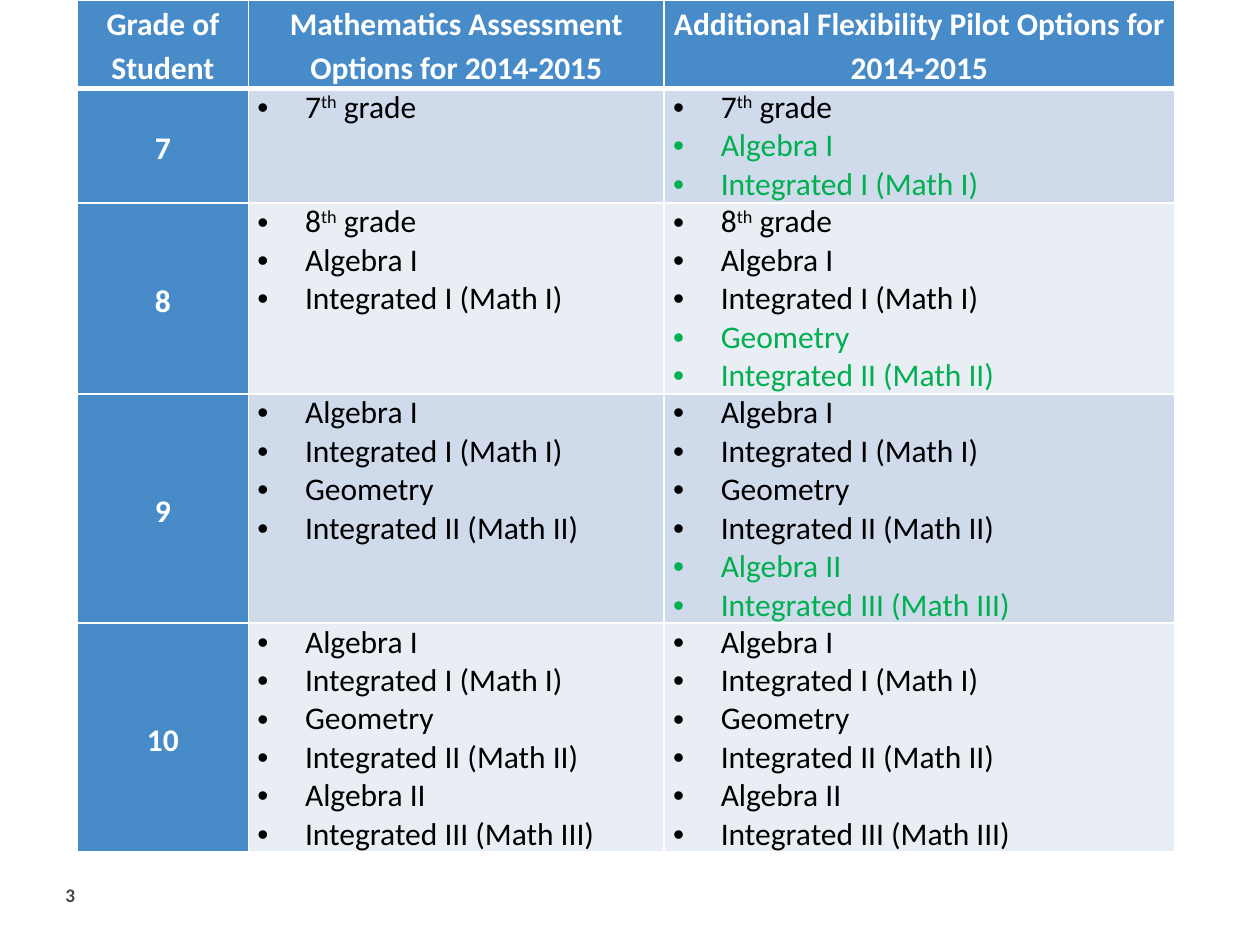
from dataclasses import dataclass

from lxml import etree
from pptx import Presentation
from pptx.dml.color import RGBColor
from pptx.enum.text import MSO_ANCHOR, PP_ALIGN
from pptx.oxml.ns import qn
from pptx.util import Cm, Pt

CENTER, LEFT = PP_ALIGN.CENTER, PP_ALIGN.LEFT
TOP, MIDDLE = MSO_ANCHOR.TOP, MSO_ANCHOR.MIDDLE
FONT = "Calibri"
COLORS = {
    "white": "FFFFFF",
    "black": "000000",
    "blue": "488BC9",
    "green": "00B050",
    "band_dark": "CFDAEB",
    "band_light": "E9EEF5",
    "gray": "45454C",
}
COLUMN_WIDTHS = (3.45, 8.38, 10.29)
HEADER_HEIGHT, LINE_HEIGHT = 1.78, 0.77
HEADINGS = (
    "Grade of Student",
    "Mathematics Assessment Options for 2014-2015",
    "Additional Flexibility Pilot Options for 2014-2015",
)
LEVEL_ONE = ("Algebra I", "Integrated I (Math I)")
LEVEL_TWO = ("Geometry", "Integrated II (Math II)")
LEVEL_THREE = ("Algebra II", "Integrated III (Math III)")


@dataclass
class GradeRow:
    grade: str
    current: tuple[str, ...]
    added: tuple[str, ...] = ()


GRADE_ROWS = (
    GradeRow("7", ("7^th^ grade",), LEVEL_ONE),
    GradeRow("8", ("8^th^ grade",) + LEVEL_ONE, LEVEL_TWO),
    GradeRow("9", LEVEL_ONE + LEVEL_TWO, LEVEL_THREE),
    GradeRow("10", LEVEL_ONE + LEVEL_TWO + LEVEL_THREE),
)


def write_text(paragraph, text, *, size=18, color="black", bold=False,
               align=LEFT, spacing=None, bullet=False):
    """Write text into a paragraph, raising the parts between carets."""
    paragraph.alignment = align
    if spacing:
        paragraph.line_spacing = spacing
    if bullet:
        properties = paragraph._p.get_or_add_pPr()
        properties.set("marL", str(Cm(0.96)))
        properties.set("indent", str(-Cm(0.96)))
        etree.SubElement(properties, qn("a:buFont"), typeface="Arial")
        etree.SubElement(properties, qn("a:buChar"), char="•")
    for index, part in enumerate(text.split("^")):
        run = paragraph.add_run()
        run.text = part
        run.font.name = FONT
        run.font.size = Pt(size)
        run.font.bold = bold
        run.font.color.rgb = RGBColor.from_string(COLORS[color])
        if index % 2:
            run._r.get_or_add_rPr().set("baseline", "30000")


def format_cell(cell, fill: str, anchor=TOP, top: int = 1, bottom: int = 1) -> None:
    """Set the margins, white borders, anchor and fill of a cell."""
    cell.margin_left = cell.margin_right = Cm(0.18)
    cell.margin_top = cell.margin_bottom = Cm(0)
    cell.vertical_anchor = anchor
    properties = cell._tc.get_or_add_tcPr()
    for side, width in (("L", 1), ("R", 1), ("T", top), ("B", bottom)):
        line = etree.SubElement(properties, qn(f"a:ln{side}"), w=str(Pt(width)))
        solid = etree.SubElement(line, qn("a:solidFill"))
        etree.SubElement(solid, qn("a:srgbClr"), val=COLORS["white"])
    cell.fill.solid()
    cell.fill.fore_color.rgb = RGBColor.from_string(COLORS[fill])


def write_label(cell, text: str) -> None:
    """Write a bold white centred label."""
    write_text(cell.text_frame.paragraphs[0], text, color="white", bold=True,
               align=CENTER, spacing=1.15)


def write_options(cell, current: tuple[str, ...], added: tuple[str, ...] = ()) -> None:
    """List the current options in black and the added ones in green."""
    options = [(name, "black") for name in current] + [(name, "green") for name in added]
    frame = cell.text_frame
    for index, (name, color) in enumerate(options):
        paragraph = frame.add_paragraph() if index else frame.paragraphs[0]
        write_text(paragraph, name, color=color, bullet=True)


def add_options_table(slide) -> None:
    """Add the table of assessment options by grade."""
    heights = [HEADER_HEIGHT] + [
        LINE_HEIGHT * len(row.current + row.added) for row in GRADE_ROWS
    ]
    table = slide.shapes.add_table(
        len(heights), len(COLUMN_WIDTHS), Cm(1.56), Cm(0),
        Cm(sum(COLUMN_WIDTHS)), Cm(sum(heights)),
    ).table
    for column, width in zip(table.columns, COLUMN_WIDTHS):
        column.width = Cm(width)
    for table_row, height in zip(table.rows, heights):
        table_row.height = Cm(height)
    for index, heading in enumerate(HEADINGS):
        format_cell(table.cell(0, index), "blue", bottom=3)
        write_label(table.cell(0, index), heading)
    for index, row in enumerate(GRADE_ROWS, start=1):
        grade, current, flexible = table.rows[index].cells
        band = "band_dark" if index % 2 else "band_light"
        top = 3 if index == 1 else 1
        format_cell(grade, "blue", anchor=MIDDLE, top=top)
        format_cell(current, band, top=top)
        format_cell(flexible, band, top=top)
        write_label(grade, row.grade)
        write_options(current, row.current)
        write_options(flexible, row.current, row.added)


def add_page_number(slide) -> None:
    """Add the page number at the bottom left."""
    box = slide.shapes.add_textbox(Cm(1.07), Cm(17.65), Cm(9.32), Cm(0.76))
    box.text_frame.word_wrap = True
    box.text_frame.vertical_anchor = MIDDLE
    write_text(box.text_frame.paragraphs[0], "3", size=11, color="gray", bold=True)


def main() -> None:
    """Build and save the slide."""
    presentation = Presentation()
    presentation.slide_width, presentation.slide_height = Cm(25.4), Cm(19.05)
    slide = presentation.slides.add_slide(presentation.slide_layouts[6])
    add_page_number(slide)
    add_options_table(slide)
    presentation.save("out.pptx")


if __name__ == "__main__":
    main()
